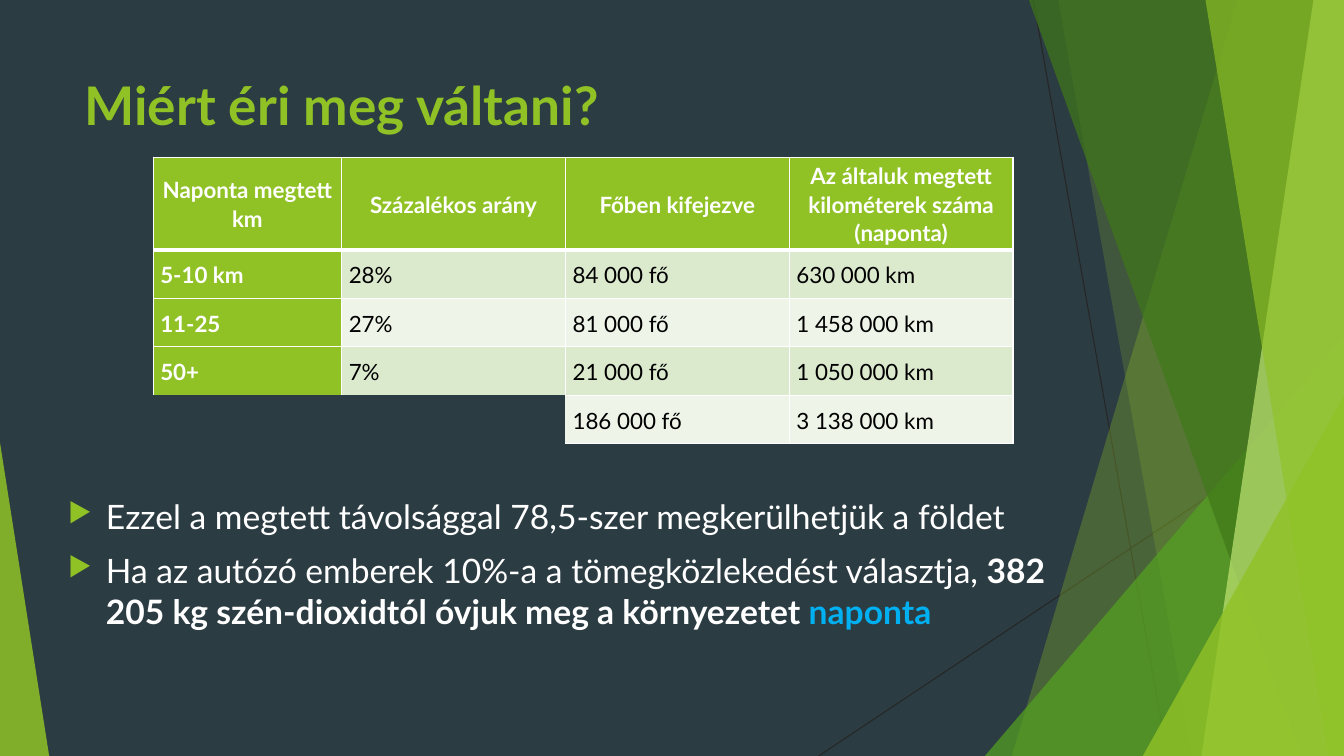
import pptx
import pptx.util
import pptx.dml.color
import pptx.enum.shapes
import pptx.enum.text
import pptx.oxml
import pptx.oxml.ns
from dataclasses import dataclass
from lxml import etree

Cm, Pt = pptx.util.Cm, pptx.util.Pt
qn = pptx.oxml.ns.qn
rgb = pptx.dml.color.RGBColor.from_string


@dataclass(frozen=True)
class Theme:
    font: str = "Lato"
    background: str = "2C3C43"
    green: str = "90C226"
    leaf: str = "54A021"
    forest: str = "3F7819"
    lime: str = "C0E474"
    hairline: str = "262626"
    white: str = "FFFFFF"
    black: str = "000000"
    blue: str = "00B0F0"
    bands: tuple = ("DBE9CD", "EEF4E8")
    title_size: int = 38
    body_size: int = 24
    table_size: int = 16


theme = Theme()


def style_font(font, size, color, bold=False):
    font.name, font.size, font.bold = theme.font, Pt(size), bold
    font.color.rgb = rgb(color)


def add_text_frame(left, top, width, height):
    text_frame = slide.shapes.add_textbox(Cm(left), Cm(top), Cm(width), Cm(height)).text_frame
    text_frame.word_wrap = True
    return text_frame


presentation = pptx.Presentation()
slide_width, slide_height = 33.87, 19.05
presentation.slide_width, presentation.slide_height = Cm(slide_width), Cm(slide_height)
slide = presentation.slides.add_slide(presentation.slide_layouts[6])
slide.background.fill.solid()
slide.background.fill.fore_color.rgb = rgb(theme.background)

# Thin lines behind the facets
for x1, y1, x2, y2 in [(26.04, 0, 29.42, slide_height), (slide_width, 10.23, 20.63, slide_height)]:
    connector = slide.shapes.add_connector(
        pptx.enum.shapes.MSO_CONNECTOR.STRAIGHT, Cm(x1), Cm(y1), Cm(x2), Cm(y2))
    connector.line.color.rgb = rgb(theme.hairline)
    connector.line.width = Pt(0.75)
    etree.SubElement(connector._element.spPr, qn("a:effectLst"))

# Facets, back to front. Bands: top and bottom x of the slanted edge.
# Triangles: left, top, width and apex position; all stand on the bottom edge.
facets = [
    ("band", (31.19, 25.5), theme.green, 30),
    ("band", (26.67, 30.05), theme.green, 20),
    ("triangle", (24.82, 8.46, 9.05, 1), theme.leaf, 72),
    ("band", (25.93, 32.79), theme.forest, 70),
    ("band", (33.1, 30.28), theme.lime, 70),
    ("band", (30.38, 33.48), theme.green, 65),
    ("triangle", (28.8, 9.98, 5.07, 1), theme.green, 80),
    ("triangle", (0, 11.15, 1.24, 0), theme.green, 85),
]
for kind, geometry, color, opacity in facets:
    if kind == "band":
        top_x, bottom_x = geometry
        builder = slide.shapes.build_freeform(Cm(top_x), 0)
        corners = [(slide_width, 0), (slide_width, slide_height), (bottom_x, slide_height)]
        builder.add_line_segments([(Cm(x), Cm(y)) for x, y in corners], close=True)
        shape = builder.convert_to_shape()
    else:
        left, top, width, apex = geometry
        shape = slide.shapes.add_shape(
            pptx.enum.shapes.MSO_SHAPE.ISOSCELES_TRIANGLE,
            Cm(left), Cm(top), Cm(width), Cm(slide_height - top))
        shape.adjustments[0] = apex
    shape.shadow.inherit = False
    shape.line.fill.background()
    shape.fill.solid()
    shape.fill.fore_color.rgb = rgb(color)
    color_element = shape._element.spPr.find(qn("a:solidFill"))[0]
    etree.SubElement(color_element, qn("a:alpha"), val=str(opacity * 1000))

# Title
paragraph = add_text_frame(1.88, 1.7, 23.88, 5.36).paragraphs[0]
paragraph.text = "Miért éri meg váltani?"
style_font(paragraph.font, theme.title_size, theme.green, True)

# Table
rows = [
    ("Naponta megtett km", "Százalékos arány", "Főben kifejezve",
     "Az általuk megtett kilométerek száma (naponta)"),
    ("5-10 km", "28%", "84 000 fő", "630 000 km"),
    ("11-25", "27%", "81 000 fő", "1 458 000 km"),
    ("50+", "7%", "21 000 fő", "1 050 000 km"),
    ("", "", "186 000 fő", "3 138 000 km"),
]
column_widths = [4.75, 5.64, 5.64, 5.64]
row_heights = [2.34] + [1.22] * 4
table = slide.shapes.add_table(
    len(rows), len(column_widths), Cm(3.86), Cm(3.96),
    Cm(sum(column_widths)), Cm(sum(row_heights))).table
table.first_row = table.horz_banding = False
for column, width in zip(table.columns, column_widths):
    column.width = Cm(width)
for row, height in zip(table.rows, row_heights):
    row.height = Cm(height)

for r, texts in enumerate(rows):
    for c, text in enumerate(texts):
        cell = table.cell(r, c)
        cell.margin_left = cell.margin_right = Cm(0.18)
        cell.margin_top = cell.margin_bottom = 0
        cell.vertical_anchor = pptx.enum.text.MSO_ANCHOR.MIDDLE

        # Sides that touch an empty cell stay without a border
        open_sides = set()
        if not text:
            open_sides = set("LRTB")
        elif r + 1 < len(rows) and not rows[r + 1][c]:
            open_sides = {"B"}
        elif c and not texts[c - 1]:
            open_sides = {"L"}
        for side in "LRTB":
            thick = (r, side) in [(0, "B"), (1, "T")]
            border = etree.SubElement(
                cell._tc.get_or_add_tcPr(), qn("a:ln" + side), w=str(Pt(3 if thick else 1)))
            if side in open_sides:
                etree.SubElement(border, qn("a:noFill"))
            else:
                fill = etree.SubElement(border, qn("a:solidFill"))
                etree.SubElement(fill, qn("a:srgbClr"), val=theme.white)

        if not text:
            cell.fill.background()
            continue
        heading = r == 0 or c == 0
        cell.fill.solid()
        cell.fill.fore_color.rgb = rgb(theme.green if heading else theme.bands[(r - 1) % 2])
        paragraph = cell.text_frame.paragraphs[0]
        paragraph.text = text
        paragraph.line_spacing = 1.07
        paragraph.space_after = Pt(8)
        alignments = pptx.enum.text.PP_ALIGN
        paragraph.alignment = alignments.CENTER if r == 0 else alignments.JUSTIFY
        style_font(paragraph.font, theme.table_size,
                   theme.white if heading else theme.black, heading)

# Bullet points: runs of text, colour and bold
points = [
    [("Ezzel a megtett távolsággal 78,5-szer megkerülhetjük a földet", theme.white, False)],
    [("Ha az autózó emberek 10%-a a tömegközlekedést választja, ", theme.white, False),
     ("382 205 kg szén-dioxidtól óvjuk meg a környezetet ", theme.white, True),
     ("naponta", theme.blue, True)],
]
text_frame = add_text_frame(1.47, 12.37, 25.32, 6.6)
for index, runs in enumerate(points):
    paragraph = text_frame.add_paragraph() if index else text_frame.paragraphs[0]
    if index:
        paragraph.space_before = Pt(10)
    properties = paragraph._p.get_or_add_pPr()
    properties.set("marL", str(Cm(0.95)))
    properties.set("indent", str(-Cm(0.95)))
    bullet_color = etree.SubElement(properties, qn("a:buClr"))
    etree.SubElement(bullet_color, qn("a:srgbClr"), val=theme.green)
    etree.SubElement(properties, qn("a:buSzPct"), val="80000")
    etree.SubElement(properties, qn("a:buChar"), char="▶")
    for text, color, bold in runs:
        run = paragraph.add_run()
        run.text = text
        style_font(run.font, theme.body_size, color, bold)

presentation.save("out.pptx")
